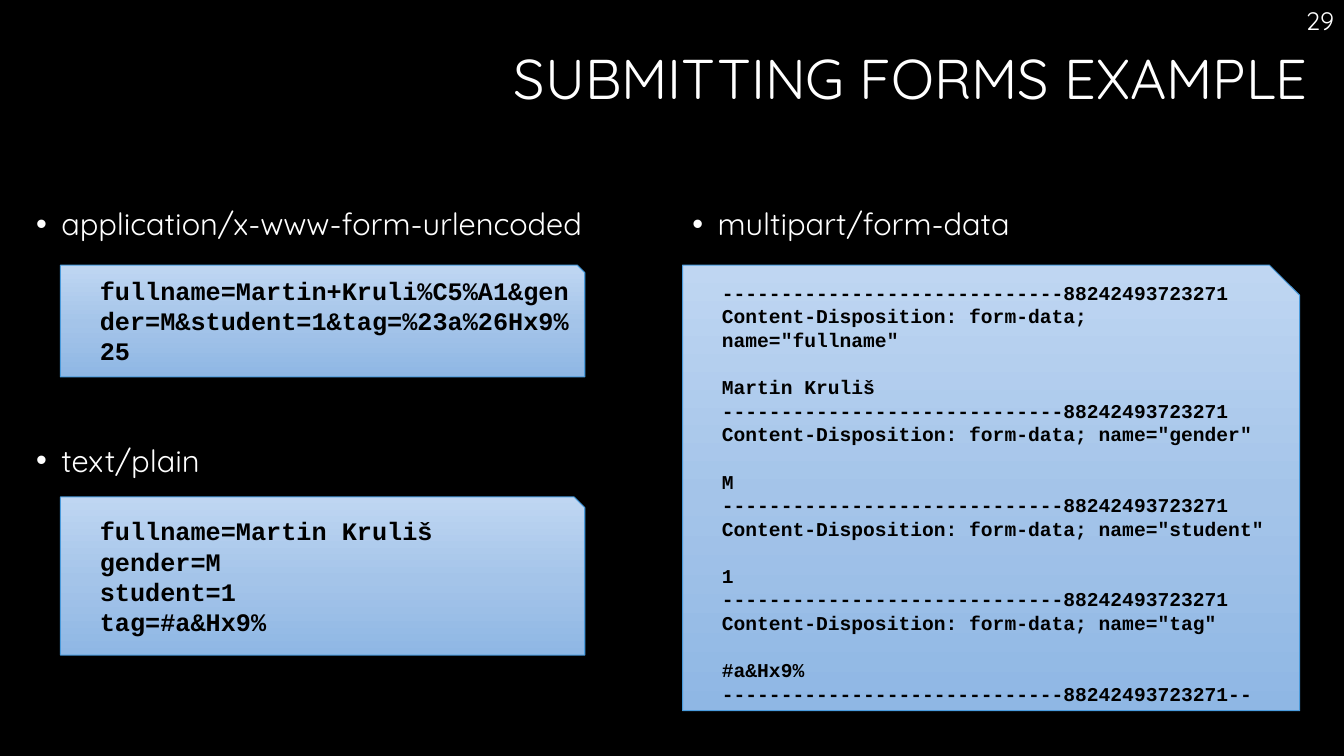
from copy import deepcopy

from pptx import Presentation
from pptx.dml.color import RGBColor
from pptx.enum.shapes import MSO_SHAPE
from pptx.enum.text import MSO_ANCHOR, MSO_AUTO_SIZE, PP_ALIGN
from pptx.oxml.ns import qn
from pptx.oxml.xmlchemy import OxmlElement
from pptx.util import Emu, Pt

PX = 9144  # 100 px to the inch
BLACK = RGBColor(0x00, 0x00, 0x00)
WHITE = RGBColor(0xFF, 0xFF, 0xFF)
EDGE = RGBColor(0x4A, 0x9B, 0xDC)
GRADIENT = [
    (0, RGBColor(0xBF, 0xD6, 0xF2)),
    (0.52, RGBColor(0xA4, 0xC4, 0xE9)),
    (1, RGBColor(0x8F, 0xB7, 0xE4)),
]
SANS, MONO = "Quicksand", "Courier New"

URLENCODED = ["fullname=Martin+Kruli%C5%A1&gender=M&student=1&tag=%23a%26Hx9%25"]
FIELDS = [("fullname", "Martin Kruliš"), ("gender", "M"), ("student", "1"), ("tag", "#a&Hx9%")]
PLAIN = [f"{name}={value}" for name, value in FIELDS]
BOUNDARY = "-" * 29 + "88242493723271"


def px(*lengths):
    return [Emu(n * PX) for n in lengths]


def write(tf, lines, size, font=SANS, color=WHITE, bold=False,
          align=PP_ALIGN.LEFT, spacing=None, anchor=MSO_ANCHOR.TOP):
    tf.word_wrap = True
    tf.auto_size = MSO_AUTO_SIZE.NONE
    tf.vertical_anchor = anchor
    for i, line in enumerate(lines):
        p = tf.paragraphs[0] if i == 0 else tf.add_paragraph()
        p.alignment = align
        p.line_spacing = spacing
        r = p.add_run()
        r.text = line
        r.font.name = font
        r.font.size = Pt(size)
        r.font.bold = bold
        r.font.color.rgb = color


def add_title(s, text):
    title = s.shapes.title
    title.left, title.top, title.width, title.height = px(26, 46, 1281, 141)
    write(title.text_frame, [text], 40, align=PP_ALIGN.RIGHT, spacing=0.9)


def add_text(s, box, text, size, **fmt):
    tf = s.shapes.add_textbox(*px(*box)).text_frame
    write(tf, [text], size, **fmt)
    return tf


def add_bullet(s, left, top, text):
    tf = add_text(s, (left, top, 630, 45), text, 22, spacing=0.9)
    pPr = tf.paragraphs[0]._p.get_or_add_pPr()
    pPr.set("marL", str(25 * PX))
    pPr.set("indent", str(-25 * PX))
    for tag, key, value in (("a:buFont", "typeface", "Arial"), ("a:buChar", "char", "•")):
        bullet = OxmlElement(tag)
        bullet.set(key, value)
        pPr.append(bullet)


def fill_gradient(fill, gs_lst):
    gs_lst.insert(1, deepcopy(gs_lst[0]))
    fill.gradient_angle = 270
    for stop, (position, color) in zip(fill.gradient_stops, GRADIENT):
        stop.position = position
        stop.color.rgb = color


def add_code(s, box, lines, size):
    sp = s.shapes.add_shape(MSO_SHAPE.SNIP_1_RECTANGLE, *px(*box))
    sp.adjustments[0] = 0.068
    sp.shadow.inherit = False
    sp.fill.gradient()
    fill_gradient(sp.fill, sp._element.spPr.find(qn("a:gradFill")).find(qn("a:gsLst")))
    sp.line.color.rgb = EDGE
    sp.line.width = Pt(0.75)
    tf = sp.text_frame
    tf.margin_left, tf.margin_top, tf.margin_right, tf.margin_bottom = px(39, 0, 10, 5)
    write(tf, lines, size, font=MONO, color=BLACK, bold=True, anchor=MSO_ANCHOR.MIDDLE)
    return tf


def add_multipart(s, box):
    lines = []
    for name, value in FIELDS:
        lines += [BOUNDARY, f'Content-Disposition: form-data; name="{name}"', value]
    tf = add_code(s, box, lines + [BOUNDARY + "--"], 14)
    for value_line in tf.paragraphs[2::3]:
        value_line.space_before = Pt(17)


def main():
    prs = Presentation()
    prs.slide_width, prs.slide_height = px(1333, 750)
    s = prs.slides.add_slide(prs.slide_layouts[5])
    s.background.fill.solid()
    s.background.fill.fore_color.rgb = BLACK

    add_title(s, "SUBMITTING FORMS EXAMPLE")
    add_text(s, (1045, 0, 288, 40), "29", 18, align=PP_ALIGN.RIGHT)

    add_bullet(s, 26, 202, "application/x-www-form-urlencoded")
    add_code(s, (60, 263, 520, 111), URLENCODED, 18)
    add_bullet(s, 26, 437, "text/plain")
    add_code(s, (60, 493, 520, 157), PLAIN, 18)
    add_bullet(s, 677, 202, "multipart/form-data")
    add_multipart(s, (677, 263, 612, 442))

    prs.save("out.pptx")


if __name__ == "__main__":
    main()
